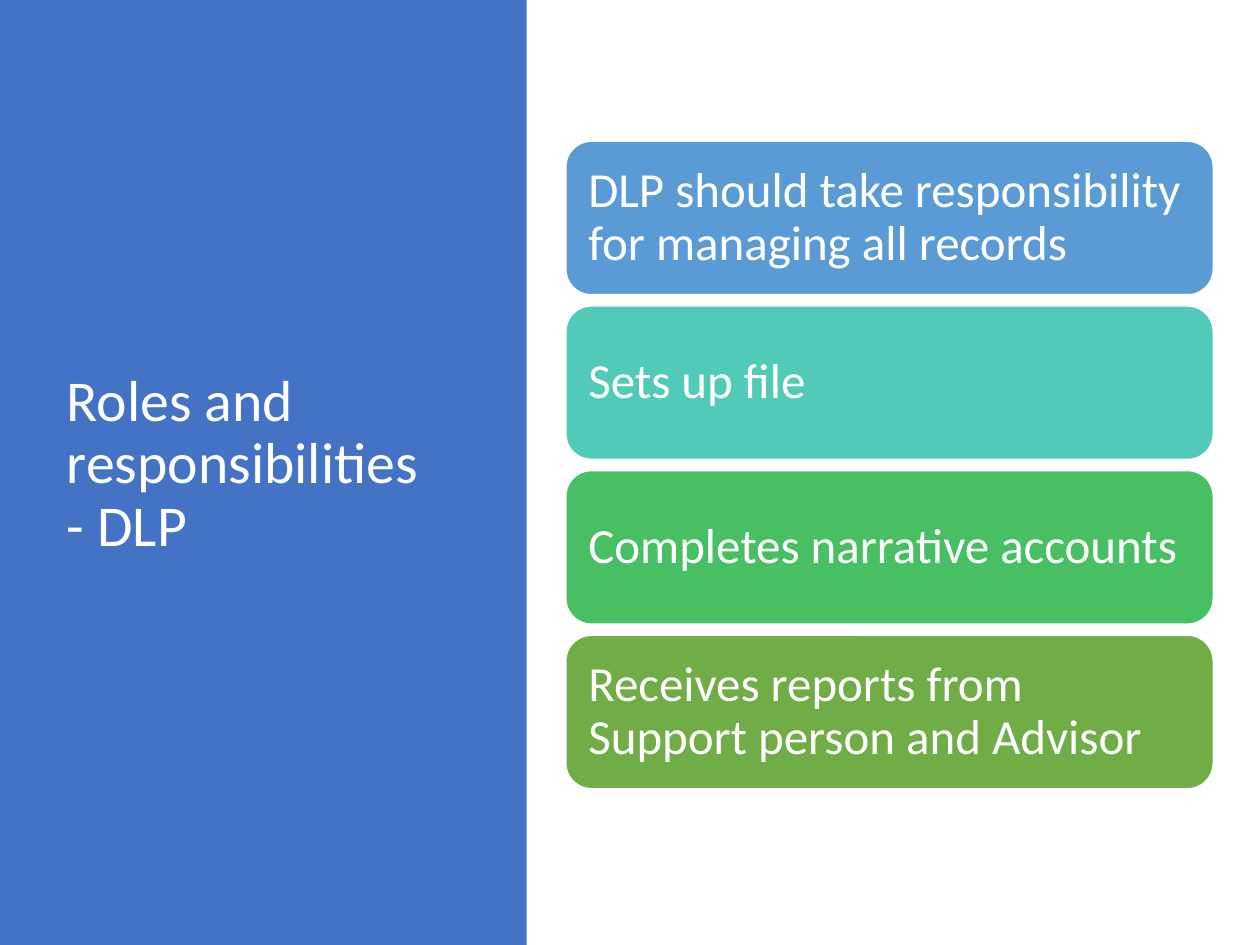
from pptx import Presentation
from pptx.dml.color import RGBColor
from pptx.enum import shapes, text
from pptx.util import Inches, Pt

COLORS = {
    "white": "FFFFFF",
    "panel": "4472C4",
    "blue": "5B9BD5",
    "teal": "52CAB8",
    "green": "49BF64",
    "olive": "70AD47",
}
DUTIES = [
    ("DLP should take responsibility for managing all records", "blue"),
    ("Sets up file", "teal"),
    ("Completes narrative accounts", "green"),
    ("Receives reports from Support person and Advisor", "olive"),
]


def rgb(name):
    """Return the named colour."""
    return RGBColor.from_string(COLORS[name])


def write(sp, content, size, inset_x=0.1, inset_y=0.05):
    """Fill a shape with one left-aligned, vertically centred paragraph."""
    tf = sp.text_frame
    tf.word_wrap = True
    tf.auto_size = text.MSO_AUTO_SIZE.NONE
    tf.vertical_anchor = text.MSO_ANCHOR.MIDDLE
    tf.margin_left = tf.margin_right = Inches(inset_x)
    tf.margin_top = tf.margin_bottom = Inches(inset_y)
    p = tf.paragraphs[0]
    p.alignment = text.PP_ALIGN.LEFT
    p.line_spacing = 0.9
    r = p.add_run()
    r.text = content
    r.font.name = "Calibri"
    r.font.size = Pt(size)
    r.font.color.rgb = rgb("white")


def add_block(s, kind, left, top, width, height, fill):
    """Add a flat filled shape without outline."""
    sp = s.shapes.add_shape(kind, Inches(left), Inches(top), Inches(width), Inches(height))
    sp.shadow.inherit = False
    sp.fill.solid()
    sp.fill.fore_color.rgb = rgb(fill)
    sp.line.fill.background()
    return sp


def add_title(s, content):
    """Place the title on top of the coloured side panel."""
    panel = add_block(s, shapes.MSO_SHAPE.RECTANGLE, 0, 0, 4.18, 7.5, "panel")
    title = s.shapes.title
    title._element.addprevious(panel._element)
    title.left, title.top = Inches(0.43), Inches(0.68)
    title.width, title.height = Inches(3.12), Inches(6.02)
    write(title, content, 33)


def add_duties(s, duties, top=1.12, pitch=1.307):
    """Stack one rounded card per duty at an even pitch."""
    for i, (content, fill) in enumerate(duties):
        card = add_block(s, shapes.MSO_SHAPE.ROUNDED_RECTANGLE,
                         4.49, top + i * pitch, 5.14, 1.22, fill)
        card.line.color.rgb = rgb("white")
        card.line.width = Pt(1)
        write(card, content, 28, inset_x=0.12, inset_y=0.12)


def main():
    """Build and save the slide."""
    prs = Presentation()
    prs.slide_width, prs.slide_height = Inches(10), Inches(7.5)
    s = prs.slides.add_slide(prs.slide_layouts[5])
    add_title(s, "Roles and responsibilities - DLP")
    add_duties(s, DUTIES)
    prs.save("out.pptx")


if __name__ == "__main__":
    main()
